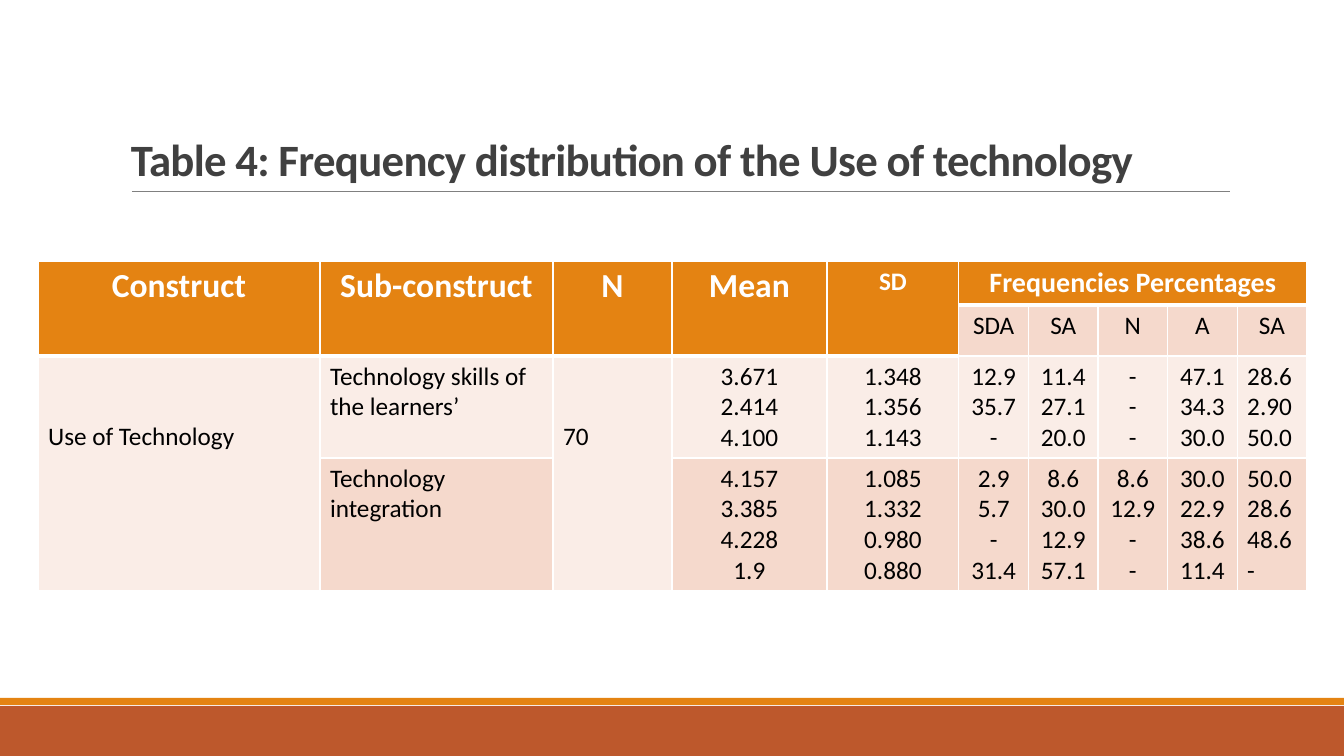
from lxml import etree
from pptx import Presentation
from pptx import util as u
from pptx.dml.color import RGBColor
from pptx.enum import shapes, text
from pptx.oxml.ns import qn

# Content
TITLE = "Table 4: Frequency distribution of the Use of technology"
HEADINGS = [("Construct", 24), ("Sub-construct", 24), ("N", 24), ("Mean", 24), ("SD", 18)]
FREQUENCY_HEADING = "Frequencies Percentages"
SCALE_LABELS = ["SDA", "SA", "N", "A", "SA"]
CONSTRUCT, SAMPLE_SIZE = "Use of Technology", "70"
# Each sub-construct: mean, SD, then the five frequencies, one row per item
SUB_CONSTRUCTS = [
    ("Technology skills of the learners’", [
        ("3.671", "1.348", "12.9", "11.4", "-", "47.1", "28.6"),
        ("2.414", "1.356", "35.7", "27.1", "-", "34.3", "2.90"),
        ("4.100", "1.143", "-", "20.0", "-", "30.0", "50.0"),
    ]),
    ("Technology integration", [
        ("4.157", "1.085", "2.9", "8.6", "8.6", "30.0", "50.0"),
        ("3.385", "1.332", "5.7", "30.0", "12.9", "22.9", "28.6"),
        ("4.228", "0.980", "-", "12.9", "-", "38.6", "48.6"),
        ("1.9", "0.880", "31.4", "57.1", "-", "11.4", "-"),
    ]),
]

THEME = {
    "font": "Calibri", "title_size": 32, "group_size": 20, "body_size": 18,
    "title": "404040", "rule": "808080", "header": "E48312", "footer": "BD582C",
    "light": "FAEDE7", "dark": "F5D9CC", "white": "FFFFFF", "body": "000000",
}

# Layout in px
SLIDE_WIDTH, SLIDE_HEIGHT = 1344, 756
TITLE_BOX = (121, 31, 1109, 160)
TITLE_RULE = (132, 191, 1230, 191)
FOOTER_BARS = [("footer", 706, 50), ("header", 698, 7)]
TABLE_LEFT, TABLE_TOP = 38, 261
LEAD_WIDTHS = [282, 233, 119, 155, 132]
FREQUENCY_WIDTH = 348
ROW_HEIGHTS = [44, 51, 102, 133]
TWO_LINES_DOWN = 66

CENTER, LEFT = text.PP_ALIGN.CENTER, text.PP_ALIGN.LEFT


def px(value):
    return u.Emu(round(value * 914400 / 100.8))


def color(name):
    return RGBColor.from_string(THEME[name])


def write(frame, lines, size, ink="body", bold=False, align=LEFT):
    for index, line in enumerate(lines):
        paragraph = frame.paragraphs[0] if index == 0 else frame.add_paragraph()
        paragraph.alignment = align
        run = paragraph.add_run()
        run.text = line
        formats = {"name": THEME["font"], "size": u.Pt(size), "bold": bold}
        for name, value in formats.items():
            setattr(run.font, name, value)
        run.font.color.rgb = color(ink)


def paint(cell, fill, bottom=1):
    properties = cell._tc.get_or_add_tcPr()
    for side, points in {"L": 1, "R": 1, "T": 1, "B": bottom}.items():
        line = etree.SubElement(properties, qn(f"a:ln{side}"), w=str(u.Pt(points)))
        solid = etree.SubElement(line, qn("a:solidFill"))
        etree.SubElement(solid, qn("a:srgbClr"), val=THEME["white"])
    cell.fill.solid()
    cell.fill.fore_color.rgb = color(fill)


def add_frame(slide):
    # Footer bars
    for name, top, height in FOOTER_BARS:
        bar = slide.shapes.add_shape(shapes.MSO_SHAPE.RECTANGLE, 0, px(top),
                                     px(SLIDE_WIDTH), px(height))
        bar.shadow.inherit = False
        bar.fill.solid()
        bar.fill.fore_color.rgb = color(name)
        bar.line.fill.background()

    # Title and its rule
    rule = slide.shapes.add_connector(shapes.MSO_CONNECTOR.STRAIGHT, *map(px, TITLE_RULE))
    rule.line.color.rgb = color("rule")
    rule.line.width = u.Pt(0.5)
    etree.SubElement(rule._element.spPr, qn("a:effectLst"))
    frame = slide.shapes.add_textbox(*map(px, TITLE_BOX)).text_frame
    frame.word_wrap = True
    frame.vertical_anchor = text.MSO_ANCHOR.BOTTOM
    write(frame, [TITLE], THEME["title_size"], "title", True)
    paragraph = frame.paragraphs[0]
    paragraph.line_spacing = 0.85
    paragraph.runs[0].font._element.set("spc", "-50")


def add_frequency_table(slide):
    lead = len(LEAD_WIDTHS)
    widths = LEAD_WIDTHS + [FREQUENCY_WIDTH / len(SCALE_LABELS)] * len(SCALE_LABELS)
    table = slide.shapes.add_table(
        len(ROW_HEIGHTS), len(widths), px(TABLE_LEFT), px(TABLE_TOP),
        px(sum(widths)), px(sum(ROW_HEIGHTS))).table
    table.first_row = table.horz_banding = False
    for column, width in zip(table.columns, widths):
        column.width = px(width)
    for row, height in zip(table.rows, ROW_HEIGHTS):
        row.height = px(height)

    # Cell fills and borders
    last = len(widths) - 1
    for row in range(len(ROW_HEIGHTS)):
        for column in range(len(widths)):
            is_header = row == 0 or (row == 1 and column < lead)
            is_light = row == 2 or (row == 3 and column in (0, 2))
            fill = "header" if is_header else "light" if is_light else "dark"
            paint(table.cell(row, column), fill, 3 if is_header else 1)

    # Header rows
    for column, (heading, size) in enumerate(HEADINGS):
        cell = table.cell(0, column)
        cell.merge(table.cell(1, column))
        write(cell.text_frame, [heading], size, "white", True, CENTER)
    group = table.cell(0, lead)
    group.merge(table.cell(0, last))
    write(group.text_frame, [FREQUENCY_HEADING], THEME["group_size"], "white", True, CENTER)
    for column, label in enumerate(SCALE_LABELS, lead):
        write(table.cell(1, column).text_frame, [label], THEME["body_size"], align=CENTER)

    # Cells shared by both sub-constructs
    for column, value in ((0, CONSTRUCT), (2, SAMPLE_SIZE)):
        cell = table.cell(2, column)
        cell.merge(table.cell(3, column))
        cell.margin_top = px(TWO_LINES_DOWN)
        write(cell.text_frame, [value], THEME["body_size"])

    # Sub-construct rows
    for row, (name, items) in enumerate(SUB_CONSTRUCTS, 2):
        write(table.cell(row, 1).text_frame, [name], THEME["body_size"])
        for column, values in enumerate(zip(*items), 3):
            write(table.cell(row, column).text_frame, values, THEME["body_size"],
                  align=LEFT if column == last else CENTER)


def main():
    presentation = Presentation()
    presentation.slide_width, presentation.slide_height = px(SLIDE_WIDTH), px(SLIDE_HEIGHT)
    slide = presentation.slides.add_slide(presentation.slide_layouts[6])
    add_frame(slide)
    add_frequency_table(slide)
    presentation.save("out.pptx")


if __name__ == "__main__":
    main()
